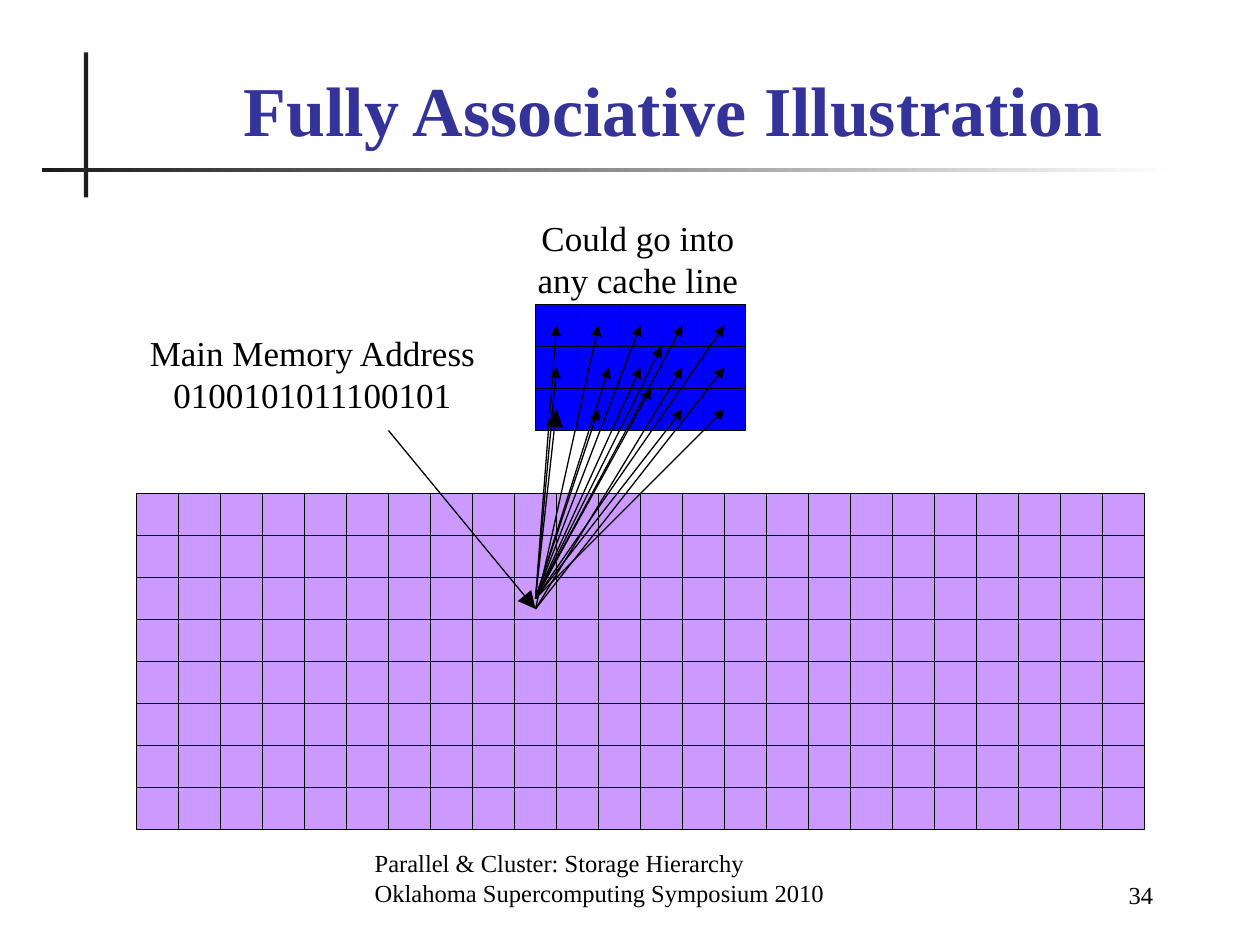
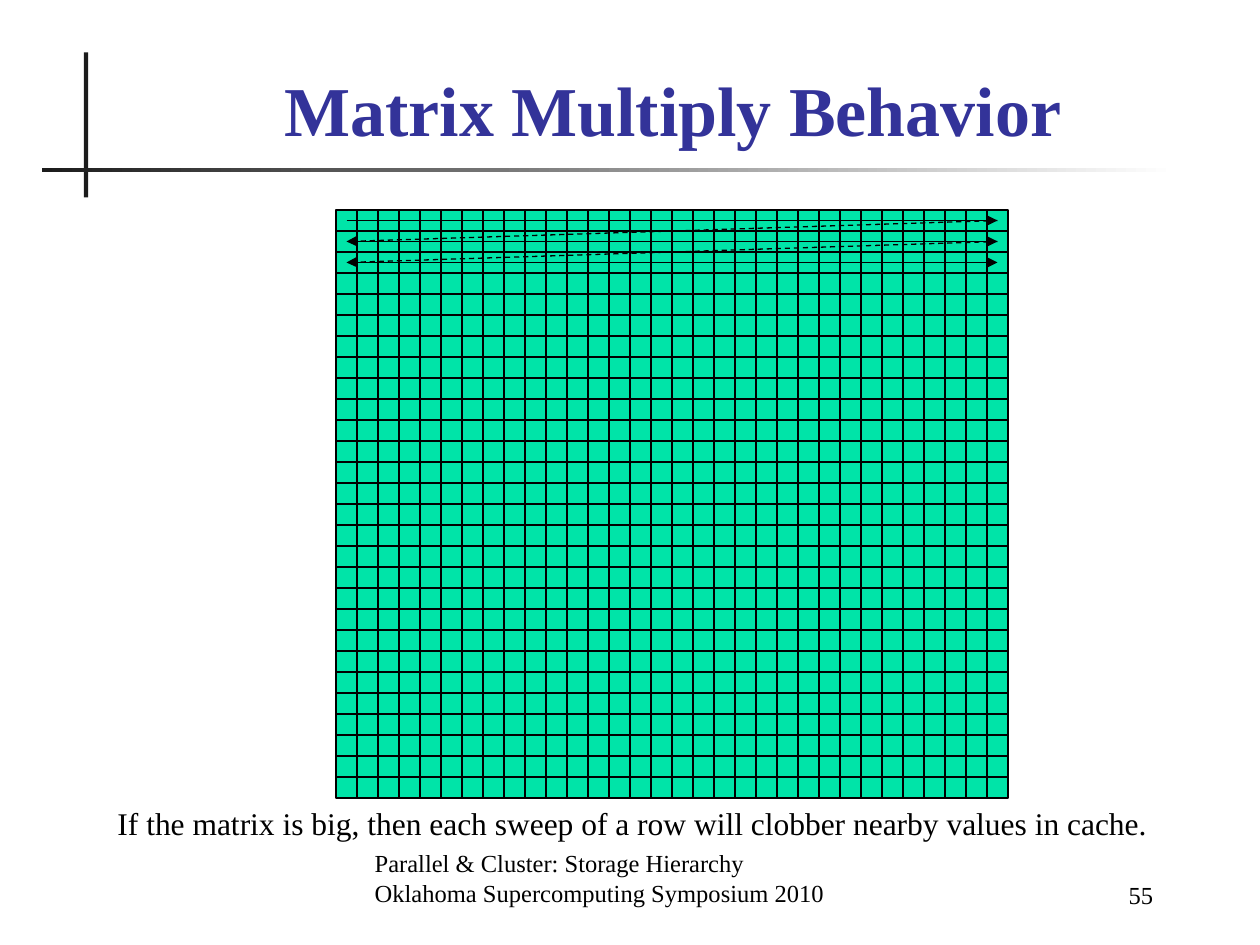
"""Build two slides on cache behavior: associative mapping and matrix sweeps."""
from collections import namedtuple

from lxml import etree
from pptx import Presentation
from pptx import util as u
from pptx.dml.color import RGBColor
from pptx.enum import dml, shapes, text
from pptx.oxml.ns import qn

PX = 7620
FONT = "Times New Roman"
BLACK, WHITE, CHARCOAL, TITLE_BLUE = "000000", "FFFFFF", "1C1C1C", "333399"
MEMORY_PURPLE, CACHE_BLUE, MATRIX_GREEN = "CC99FF", "0000FF", "00E4A8"
TOP, LEFT, BOTTOM, RIGHT = range(4)
CENTER, END = text.PP_ALIGN.CENTER, text.PP_ALIGN.RIGHT
ANCHOR_TOP, ANCHOR_BOTTOM = text.MSO_ANCHOR.TOP, text.MSO_ANCHOR.BOTTOM

Box = namedtuple("Box", "left top width height")


def emu(*lengths):
    """Turn px lengths into EMU."""
    return [u.Emu(length * PX) for length in lengths]


def color(hex_string):
    """Turn a hex string into a color."""
    return RGBColor.from_string(hex_string)


def add_box(slide, box, fill, outline=None):
    """Add a flat rectangle with an optional thin outline."""
    shape = slide.shapes.add_shape(shapes.MSO_SHAPE.RECTANGLE, *emu(*box))
    shape.shadow.inherit = False
    shape.fill.solid()
    shape.fill.fore_color.rgb = color(fill)
    if outline:
        shape.line.color.rgb = color(outline)
        shape.line.width = u.Pt(0.75)
    else:
        shape.line.fill.background()
    return shape


def add_text(slide, box, lines, size, align=None, anchor=ANCHOR_TOP,
             wrap=False, ink=BLACK, bold=False):
    """Add a text box with one paragraph per line."""
    frame = slide.shapes.add_textbox(*emu(*box)).text_frame
    frame.word_wrap = wrap
    frame.vertical_anchor = anchor
    frame.text = "\n".join(lines)
    for paragraph in frame.paragraphs:
        paragraph.alignment = align
        paragraph.font.name = FONT
        paragraph.font.size = u.Pt(size)
        paragraph.font.bold = bold
        paragraph.font.color.rgb = color(ink)


def add_line(slide, start, end, head=None, dashed=False):
    """Add a thin black line, with an arrowhead of the given size."""
    connector = slide.shapes.add_connector(
        shapes.MSO_CONNECTOR.STRAIGHT, *emu(*start, *end))
    connector.line.color.rgb = color(BLACK)
    connector.line.width = u.Pt(0.75)
    if dashed:
        connector.line.dash_style = dml.MSO_LINE.DASH
    properties = connector.element.spPr
    if head:
        etree.SubElement(properties.find(qn("a:ln")), qn("a:tailEnd"),
                         type="triangle", w=head, len=head)
    etree.SubElement(properties, qn("a:effectLst"))
    return connector


def add_grid(slide, box, cell, fill):
    """Add a filled rectangle ruled into square cells."""
    frame = add_box(slide, box, fill, BLACK)
    right, bottom = box.left + box.width, box.top + box.height
    for y in range(box.top + cell, bottom, cell):
        rule = add_line(slide, (box.left, y), (right, y))
        if 2 * y == box.top + bottom:
            rule.begin_connect(frame, LEFT)
            rule.end_connect(frame, RIGHT)
    for x in range(box.left + cell, right, cell):
        rule = add_line(slide, (x, box.top), (x, bottom))
        if 2 * x == box.left + right:
            rule.begin_connect(frame, TOP)
            rule.end_connect(frame, BOTTOM)


def add_base_slide(presentation, title, number):
    """Add a slide with the crossed bars, footer, number and title."""
    slide = presentation.slides.add_slide(presentation.slide_layouts[6])
    add_box(slide, Box(80, 50, 4, 138), CHARCOAL)
    band = add_box(slide, Box(40, 160, 1080, 4), CHARCOAL)
    band.fill.gradient()
    band.fill.gradient_angle = 0
    for stop, position, shade in zip(band.fill.gradient_stops, (0, 1),
                                     (CHARCOAL, WHITE)):
        stop.position = position
        stop.color.rgb = color(shade)
    add_text(slide, Box(345, 810, 525, 60),
             ["Parallel & Cluster: Storage Hierarchy",
              "Oklahoma Supercomputing Symposium 2010"],
             14, anchor=ANCHOR_BOTTOM, wrap=True)
    add_text(slide, Box(940, 812, 170, 60), [str(number)], 14, END,
             ANCHOR_BOTTOM, True)
    add_text(slide, Box(130, 60, 1022, 89), [title], 40, CENTER,
             ANCHOR_BOTTOM, True, TITLE_BLUE, True)
    return slide


def add_cache_arrows(slide, cache, cell, source):
    """Fan arrows from a memory location to every cache line."""
    moved = {(60, 60): (70, 60), (100, 100): (110, 80)}
    low_starts = {(60, 20), (140, 60), (180, 60)}
    half = cell // 2
    targets = [(x, y) for x in range(half, cache.width, cell)
               for y in range(half, cache.height, cell)]
    for target in targets + [(120, 40)]:
        x, y = moved.get(target, target)
        drop = 10 if target in low_starts else 0
        add_line(slide, (source[0], source[1] + drop),
                 (cache.left + x, cache.top + y),
                 "lg" if target == (20, 100) else "med")


def add_associative_slide(presentation):
    """Show one memory address that may go into any cache line."""
    slide = add_base_slide(presentation, "Fully Associative Illustration", 34)
    cell = 40
    memory = Box(130, 470, 24 * cell, 8 * cell)
    cache = Box(510, 290, 5 * cell, 3 * cell)
    add_grid(slide, memory, cell, MEMORY_PURPLE)
    add_grid(slide, cache, cell, CACHE_BLUE)
    add_text(slide, Box(500, 200, 215, 92),
             ["Could go into", "any cache line"], 20, CENTER)
    add_text(slide, Box(130, 310, 335, 92),
             ["Main Memory Address", "0100101011100101"], 20, CENTER)
    source = (memory.left + 380, memory.top + 100)
    add_line(slide, (370, 410), (source[0], source[1] + 10), "lg")
    add_cache_arrows(slide, cache, cell, source)


def add_sweeps(slide, matrix, cell, count):
    """Sweep the first rows, with a dashed return between them."""
    left = matrix.left + cell // 2
    right = matrix.left + matrix.width - cell // 2
    for row in range(count):
        y = matrix.top + cell // 2 + row * cell
        if row:
            add_line(slide, (right, y - cell), (left, y), "med", True)
        add_line(slide, (left, y), (right, y), "med")


def add_matrix_slide(presentation):
    """Show how a matrix is swept row by row."""
    slide = add_base_slide(presentation, "Matrix Multiply Behavior", 55)
    cell = 20
    matrix = Box(320, 200, 32 * cell, 28 * cell)
    add_grid(slide, matrix, cell, MATRIX_GREEN)
    add_sweeps(slide, matrix, cell, 3)
    add_text(slide, Box(100, 760, 1005, 48),
             ["If the matrix is big, then each sweep of a row will clobber "
              "nearby values in cache."], 18, CENTER)


def main():
    """Build and save the presentation."""
    presentation = Presentation()
    presentation.slide_width, presentation.slide_height = emu(1200, 900)
    add_associative_slide(presentation)
    add_matrix_slide(presentation)
    presentation.save("out.pptx")


if __name__ == "__main__":
    main()
